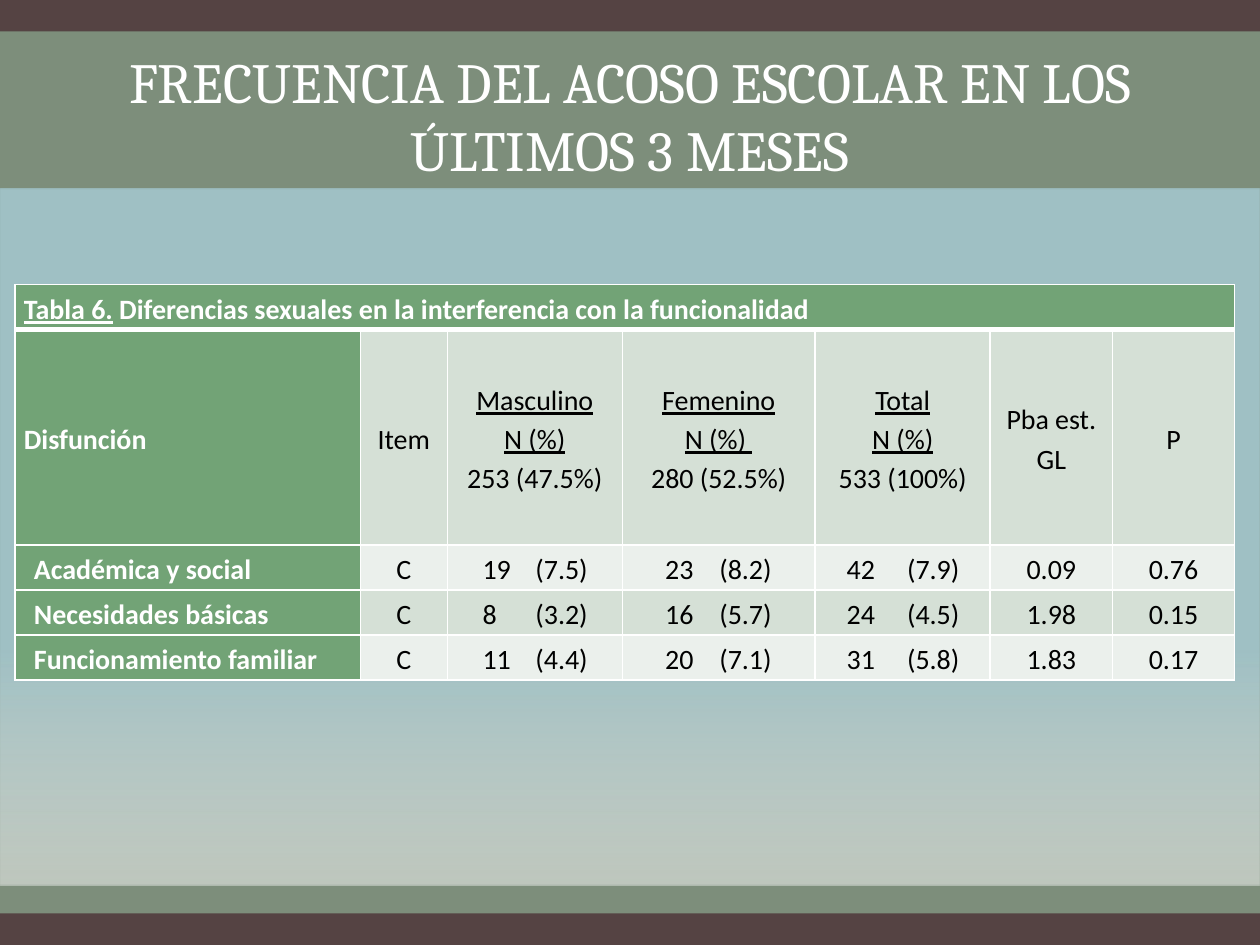
from dataclasses import dataclass
from typing import NamedTuple

from lxml.etree import SubElement
from pptx import Presentation
from pptx.dml.color import RGBColor
from pptx.enum.shapes import MSO_SHAPE as Preset
from pptx.enum.text import MSO_ANCHOR as Anchor, PP_ALIGN as Align
from pptx.oxml.ns import qn
from pptx.util import Inches, Pt


@dataclass(frozen=True)
class Theme:
    frame: str = "554343"
    band: str = "829782"
    sky: str = "A8CDD7"
    white: str = "FFFFFF"
    black: str = "000000"
    header: str = "72A376"
    stripes: tuple = ("D5E0D6", "EBF0EC")
    title_font: str = "Cambria"
    body_font: str = "Calibri"
    title_size: float = 32.4
    body_size: float = 16


THEME = Theme()
CELL = 0.25  # side of one grid square, in inches
COLUMNS, ROWS = 40, 30


class Area(NamedTuple):
    """A place on the slide in grid columns and rows."""
    left: float
    top: float
    width: float
    height: float

    def lengths(self) -> list:
        return [grid(value) for value in self]


class Span(NamedTuple):
    text: str
    underline: bool = False


class Tally(NamedTuple):
    """A count and its percentage, set apart by a tab stop."""
    count: str
    percent: str


class TallyLayout(NamedTuple):
    margin: float
    tab: float


def grid(squares: float) -> int:
    return Inches(squares * CELL)


def rgb(value: str) -> RGBColor:
    return RGBColor.from_string(value)


def set_alpha(color_parent, percent: int) -> None:
    color = next(color_parent.iter(qn("a:srgbClr")))
    SubElement(color, qn("a:alpha"), val=str(percent * 1000))


def write(frame, lines: list, *, size=THEME.body_size, font=THEME.body_font,
          color=THEME.black, bold=False, align=Align.CENTER, spacing=1.15,
          after=0, indent=0.0, tab=0.0) -> None:
    """Write one paragraph per line; each line is a list of spans."""
    frame.word_wrap = True
    for index, spans in enumerate(lines):
        para = frame.paragraphs[0] if index == 0 else frame.add_paragraph()
        para.alignment, para.line_spacing, para.space_after = align, spacing, Pt(after)
        properties = para._p.get_or_add_pPr()
        if indent:
            properties.set("marL", str(Inches(indent)))
        if tab:
            stops = SubElement(properties, qn("a:tabLst"))
            SubElement(stops, qn("a:tab"), pos=str(Inches(tab)), algn="l")
        for span in spans:
            run = para.add_run()
            run.text = span.text
            run.font.size, run.font.name = Pt(size), font
            run.font.bold, run.font.underline = bold, span.underline
            run.font.color.rgb = rgb(color)


def add_panel(slide, area: Area, color: str):
    panel = slide.shapes.add_shape(Preset.RECTANGLE, *area.lengths())
    panel.shadow.inherit = False
    panel.line.fill.background()
    panel.fill.solid()
    panel.fill.fore_color.rgb = rgb(color)
    return panel


def style_cell(cell, fill: str, top: float = 1, bottom: float = 1) -> None:
    properties = cell._tc.get_or_add_tcPr()
    for side, width in (("L", 1), ("R", 1), ("T", top), ("B", bottom)):
        line = SubElement(properties, qn(f"a:ln{side}"), w=str(Pt(width)))
        paint = SubElement(line, qn("a:solidFill"))
        SubElement(paint, qn("a:srgbClr"), val=THEME.white)
    cell.fill.solid()
    cell.fill.fore_color.rgb = rgb(fill)
    cell.vertical_anchor = Anchor.MIDDLE
    cell.margin_left = cell.margin_right = Inches(0.07)
    cell.margin_top = cell.margin_bottom = 0


# Table content
CAPTION = [Span("Tabla 6.", True),
           Span(" Diferencias sexuales en la interferencia con la funcionalidad")]


def group_heading(name: str, unit: str, total: str) -> list:
    return [[Span(name, True)], [Span(unit, True)], [Span(total)]]


HEADINGS = [
    [[Span("Disfunción")]],
    [[Span("Item")]],
    group_heading("Masculino", "N (%)", "253 (47.5%)"),
    group_heading("Femenino", "N (%) ", "280 (52.5%)"),
    group_heading("Total", "N (%)", "533 (100%)"),
    [[Span("Pba est. GL")]],
    [[Span("P")]],
]
RECORDS = [
    ("Académica y social", "C", Tally("19", "(7.5)"), Tally("23", "(8.2)"),
     Tally("42", "(7.9)"), "0.09", "0.76"),
    ("Necesidades básicas", "C", Tally("8", "(3.2)"), Tally("16", "(5.7)"),
     Tally("24", "(4.5)"), "1.98", "0.15"),
    ("Funcionamiento familiar", "C", Tally("11", "(4.4)"), Tally("20", "(7.1)"),
     Tally("31", "(5.8)"), "1.83", "0.17"),
]
TALLY_LAYOUTS = {2: TallyLayout(0.28, 0.42), 3: TallyLayout(0.34, 0.43),
                 4: TallyLayout(0.25, 0.48)}
COLUMN_WIDTHS = [10.96, 2.76, 5.56, 6.12, 5.56, 3.88, 3.88]
ROW_HEIGHTS = [1.43, 6.83] + [1.43] * len(RECORDS)
TABLE_AREA = Area(0.48, 9.04, sum(COLUMN_WIDTHS), sum(ROW_HEIGHTS))


def add_background(slide) -> None:
    add_panel(slide, Area(0, 0, COLUMNS, ROWS), THEME.frame)
    band = add_panel(slide, Area(0, 1, COLUMNS, ROWS - 2), THEME.band)
    set_alpha(band.fill._xPr, 90)
    sky = add_panel(slide, Area(0, 6, COLUMNS, 22.12), THEME.sky)
    sky.fill.gradient()
    sky.fill.gradient_angle = 270
    settings = ((0.66, THEME.sky, 79), (1, THEME.white, 50))
    for stop, (position, color, alpha) in zip(sky.fill.gradient_stops, settings):
        stop.position = position
        stop.color.rgb = rgb(color)
        set_alpha(stop._gs, alpha)


def add_title(slide, text: str) -> None:
    box = slide.shapes.add_textbox(*Area(2, 1, COLUMNS - 4, 5).lengths())
    box.text_frame.vertical_anchor = Anchor.BOTTOM
    write(box.text_frame, [[Span(text)]], size=THEME.title_size,
          font=THEME.title_font, color=THEME.white, spacing=1.0)


def add_results(slide) -> None:
    table = slide.shapes.add_table(len(ROW_HEIGHTS), len(COLUMN_WIDTHS),
                                   *TABLE_AREA.lengths()).table
    table.first_row = table.horz_banding = False
    for column, width in zip(table.columns, COLUMN_WIDTHS):
        column.width = grid(width)
    for row, height in zip(table.rows, ROW_HEIGHTS):
        row.height = grid(height)
    label = dict(color=THEME.white, bold=True, align=Align.LEFT)

    # Caption across the whole table
    last = len(COLUMN_WIDTHS) - 1
    for column in range(last + 1):
        style_cell(table.cell(0, column), THEME.header, bottom=3)
    table.cell(0, 0).merge(table.cell(0, last))
    write(table.cell(0, 0).text_frame, [CAPTION], after=10, **label)

    # Headings
    for column, lines in enumerate(HEADINGS):
        cell = table.cell(1, column)
        style_cell(cell, THEME.stripes[0] if column else THEME.header, top=3)
        write(cell.text_frame, lines, **({} if column else label))

    # Records
    for row, record in enumerate(RECORDS, start=2):
        for column, value in enumerate(record):
            cell = table.cell(row, column)
            style_cell(cell, THEME.stripes[(row + 1) % 2] if column else THEME.header)
            if isinstance(value, Tally):
                layout = TALLY_LAYOUTS[column]
                cell.margin_left = Inches(layout.margin)
                write(cell.text_frame, [[Span("\t".join(value))]],
                      align=Align.LEFT, tab=layout.tab)
            else:
                style = {} if column else dict(label, indent=0.08)
                write(cell.text_frame, [[Span(value)]], **style)


def main() -> None:
    deck = Presentation()
    deck.slide_width, deck.slide_height = grid(COLUMNS), grid(ROWS)
    slide = deck.slides.add_slide(deck.slide_layouts[6])
    add_background(slide)
    add_title(slide, "FRECUENCIA DEL ACOSO ESCOLAR EN LOS ÚLTIMOS 3 MESES")
    add_results(slide)
    deck.save("out.pptx")


if __name__ == "__main__":
    main()
